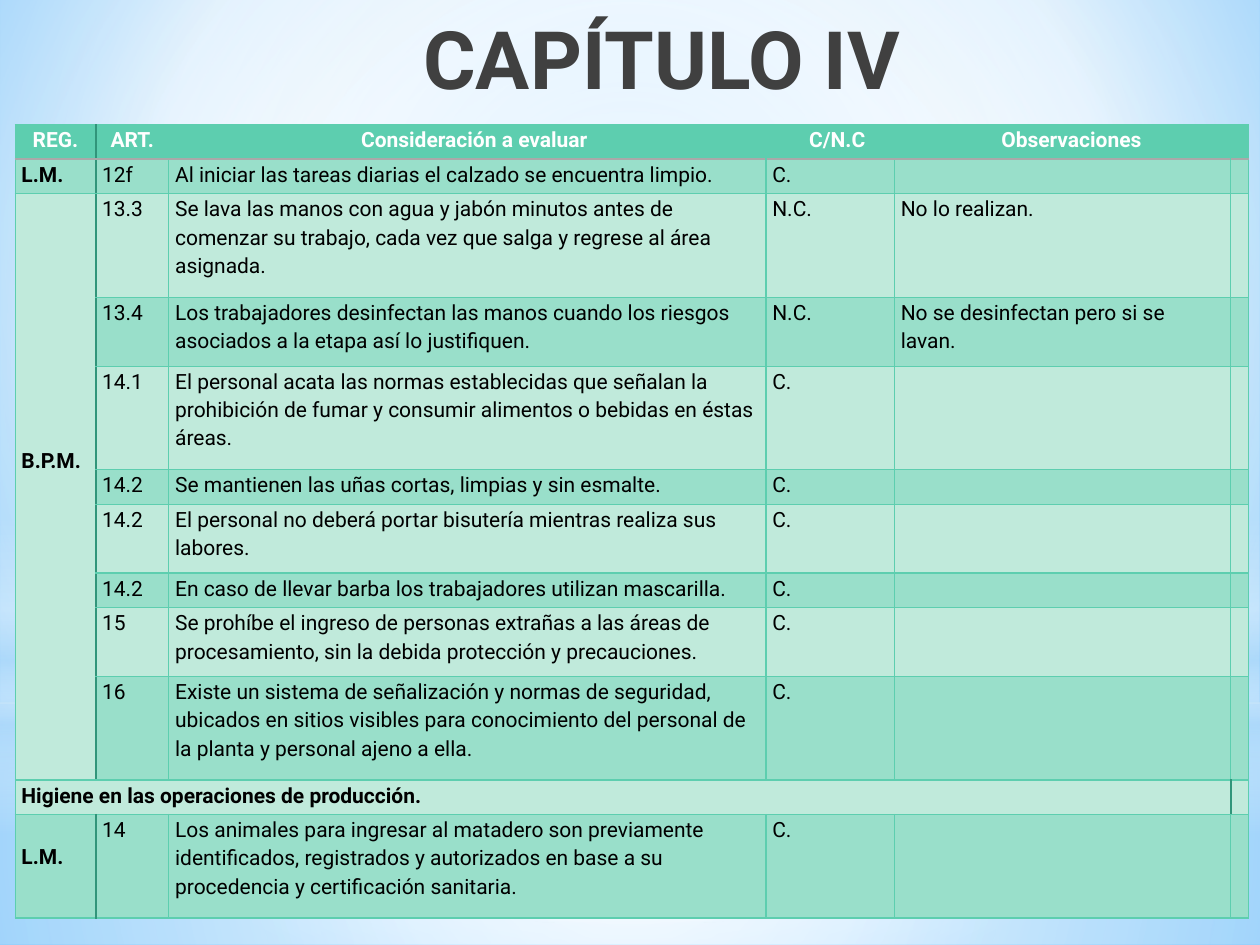
from lxml import etree
from pptx import Presentation
from pptx.dml.color import RGBColor
from pptx.enum.shapes import MSO_SHAPE
from pptx.enum.text import MSO_ANCHOR, PP_ALIGN
from pptx.oxml.ns import qn
from pptx.util import Inches, Pt

RECT, OVAL = MSO_SHAPE.RECTANGLE, MSO_SHAPE.OVAL
LEFT, CENTER = PP_ALIGN.LEFT, PP_ALIGN.CENTER
TOP = MSO_ANCHOR.TOP

THEME = {
    "font": "Roboto", "title_size": 46, "cell_size": 12,
    "title": "404040", "header_text": "FFFFFF", "text": "000000",
    "header": "5DCEAF", "dark_band": "99DFCA", "light_band": "C0EADB",
    "grid": "5DCEAF", "divider": "31957A", "header_rule": "A9A9A9",
    "white": "FFFFFF", "sky": "B4DCFA",
}
WHITE, SKY = THEME["white"], THEME["sky"]
CENTRE = (50, 50, 50, 50)

TITLE = "CAPÍTULO IV"
HEADER = ["REG.", "ART.", "Consideración a evaluar", "C/N.C", "Observaciones"]
# regulation, article, consideration, compliance, remark
BODY = [
    ("L.M.", "12f", "Al iniciar las tareas diarias el calzado se encuentra limpio.", "C.", ""),
    ("B.P.M.", "13.3", "Se lava las manos con agua y jabón minutos antes de comenzar su trabajo, "
     "cada vez que salga y regrese al área asignada.", "N.C.", "No lo realizan."),
    ("", "13.4", "Los trabajadores desinfectan las manos cuando los riesgos asociados a la etapa "
     "así lo justifiquen.", "N.C.", "No se desinfectan pero si se lavan."),
    ("", "14.1", "El personal acata las normas establecidas que señalan la prohibición de fumar "
     "y consumir alimentos o bebidas en éstas áreas.", "C.", ""),
    ("", "14.2", "Se mantienen las uñas cortas, limpias y sin esmalte.", "C.", ""),
    ("", "14.2", "El personal no deberá portar bisutería mientras realiza sus labores.", "C.", ""),
    ("", "14.2", "En caso de llevar barba los trabajadores utilizan mascarilla.", "C.", ""),
    ("", "15", "Se prohíbe el ingreso de personas extrañas a las áreas de procesamiento, "
     "sin la debida protección y precauciones.", "C.", ""),
    ("", "16", "Existe un sistema de señalización y normas de seguridad, ubicados en sitios visibles "
     "para conocimiento del personal de la planta y personal ajeno a ella.", "C.", ""),
    ("Higiene en las operaciones de producción.", "", "", "", ""),
    ("L.M.", "14", "Los animales para ingresar al matadero son previamente identificados, registrados "
     "y autorizados en base a su procedencia y certificación sanitaria.", "C.", ""),
]
HEADER_COLS = [0, 1, 2, 4, 5]
BODY_COLS = [0, 1, 2, 3, 5]
COL_WIDTHS = [0.64, 0.58, 4.74, 0.11, 0.91, 2.67, 0.11]
LINES_PER_ROW = [1, 1, 3, 2, 3, 1, 2, 1, 2, 3, 1, 3]
ROW_HEIGHT = {1: 0.274, 2: 0.547, 3: 0.822}
BPM_ROW, BPM_END, SECTION_ROW, LAST_ROW = 2, 9, 10, 11
MERGES = ([((0, 2), (0, 3)), ((0, 5), (0, 6)),
           ((BPM_ROW, 0), (BPM_END, 0)), ((SECTION_ROW, 0), (SECTION_ROW, 5))]
          + [((r, 3), (r, 4)) for r in range(1, 12) if r != SECTION_ROW])
REG_TOP_MARGIN = {BPM_ROW: 2.0, LAST_ROW: 0.21}

BACKGROUND = [(0, "9ED5FF", 100), (60, WHITE, 100), (100, "5BB9FF", 100)]
# preset, top, height, stops (position, colour, opacity), focus (None = vertical)
GLOWS = [
    (RECT, 5.58, 1.92, [(0, WHITE, 91), (37, WHITE, 76), (100, SKY, 79)], CENTRE),
    (RECT, 0, 5.58, [(0, WHITE, 89), (48, WHITE, 62), (100, SKY, 79)], CENTRE),
    (RECT, 4.12, 2.5, [(0, WHITE, 0), (29, WHITE, 30), (45, SKY, 40), (55, WHITE, 26),
                       (65, SKY, 60), (100, WHITE, 0)], None),
    (OVAL, 1.75, 5.58, [(0, WHITE, 100), (56, WHITE, 0)], CENTRE),
]


def rgb(name):
    return RGBColor.from_string(THEME[name])


def sub(parent, tag, **attrs):
    return etree.SubElement(parent, qn(tag), {k: str(v) for k, v in attrs.items()})


def set_gradient(holder, stops, focus):
    """Swap the solid fill inside holder for a gradient."""
    solid = holder.find(qn("a:solidFill"))
    grad = etree.Element(qn("a:gradFill"), rotWithShape="1")
    stop_list = sub(grad, "a:gsLst")
    for pos, color, opacity in stops:
        clr = sub(sub(stop_list, "a:gs", pos=pos * 1000), "a:srgbClr", val=color)
        if opacity < 100:
            sub(clr, "a:alpha", val=opacity * 1000)
    if focus:
        circle = sub(grad, "a:path", path="circle")
        sub(circle, "a:fillToRect", **{k: v * 1000 for k, v in zip("ltrb", focus)})
    else:
        sub(grad, "a:lin", ang=90 * 60000, scaled=0)
    holder.replace(solid, grad)


def write(tf, text, size, color, bold=False, align=LEFT, spacing=1.0):
    p = tf.paragraphs[0]
    p.alignment, p.line_spacing = align, spacing
    r = p.add_run()
    r.text = text
    r.font.name, r.font.size, r.font.bold = THEME["font"], Pt(size), bold
    r.font.color.rgb = rgb(color)


def cell_borders(row, col):
    """Colour and width in points for the left, right, top and bottom sides."""
    sides = {side: ("grid", 0.75) for side in "LRTB"}
    divider_col = 5 if row == SECTION_ROW else 0
    if col == divider_col or (row == SECTION_ROW and col == 0):
        sides["R"] = ("divider", 1.25)
    if col == divider_col + 1:
        sides["L"] = ("divider", 1.25)
    if row == 0:
        sides["B"] = ("header_rule", 1.25)
    if row == 1:
        sides["T"] = ("header_rule", 1.25)
    return sides


def style_cell(cell, row, col):
    cell.margin_left = cell.margin_right = Inches(0.05)
    cell.margin_top = Inches(REG_TOP_MARGIN.get(row, 0) if col == 0 else 0)
    cell.margin_bottom = 0
    cell.vertical_anchor = TOP
    tc_pr = cell._tc.get_or_add_tcPr()
    for side, (color, width) in cell_borders(row, col).items():
        ln = sub(tc_pr, f"a:ln{side}", w=int(Pt(width)))
        sub(sub(ln, "a:solidFill"), "a:srgbClr", val=THEME[color])
    cell.fill.solid()
    band = "header" if row == 0 else "dark_band" if row % 2 else "light_band"
    cell.fill.fore_color.rgb = rgb(band)
    # keeps empty cells from stretching their row
    end = cell.text_frame.paragraphs[0]._p.get_or_add_endParaRPr()
    end.set("sz", str(THEME["cell_size"] * 100))


def add_backdrop(s):
    s.background.fill.solid()
    set_gradient(s._element.find(".//" + qn("p:bgPr")), BACKGROUND, (20, 10, 20, 60))
    for preset, top, height, stops, focus in GLOWS:
        sp = s.shapes.add_shape(preset, 0, Inches(top), Inches(10), Inches(height))
        sp.shadow.inherit = False
        sp.line.fill.background()
        sp.fill.solid()
        set_gradient(sp._element.spPr, stops, focus)


def add_title(s):
    tf = s.shapes.add_textbox(Inches(1.69), Inches(-0.02), Inches(7.12), Inches(1.25)).text_frame
    tf.word_wrap = True
    tf.margin_top = Inches(0.09)
    write(tf, TITLE, THEME["title_size"], "title", bold=True, align=CENTER)


def add_checklist(s):
    heights = [ROW_HEIGHT[n] for n in LINES_PER_ROW]
    table = s.shapes.add_table(len(heights), len(COL_WIDTHS), Inches(0.12), Inches(0.99),
                               Inches(sum(COL_WIDTHS)), Inches(sum(heights))).table
    for column, width in zip(table.columns, COL_WIDTHS):
        column.width = Inches(width)
    for i, height in enumerate(heights):
        table.rows[i].height = Inches(height)
        for j in range(len(COL_WIDTHS)):
            style_cell(table.cell(i, j), i, j)
    for start, end in MERGES:
        table.cell(*start).merge(table.cell(*end))
    for i, texts in enumerate([HEADER] + BODY):
        head = i == 0
        for col, text in zip(HEADER_COLS if head else BODY_COLS, texts):
            if text:
                write(table.cell(i, col).text_frame, text, THEME["cell_size"],
                      "header_text" if head else "text", bold=head or col == 0,
                      align=CENTER if head else LEFT, spacing=1.15)


def main():
    prs = Presentation()
    prs.slide_width, prs.slide_height = Inches(10), Inches(7.5)
    s = prs.slides.add_slide(prs.slide_layouts[6])
    add_backdrop(s)
    add_title(s)
    add_checklist(s)
    prs.save("out.pptx")


if __name__ == "__main__":
    main()
